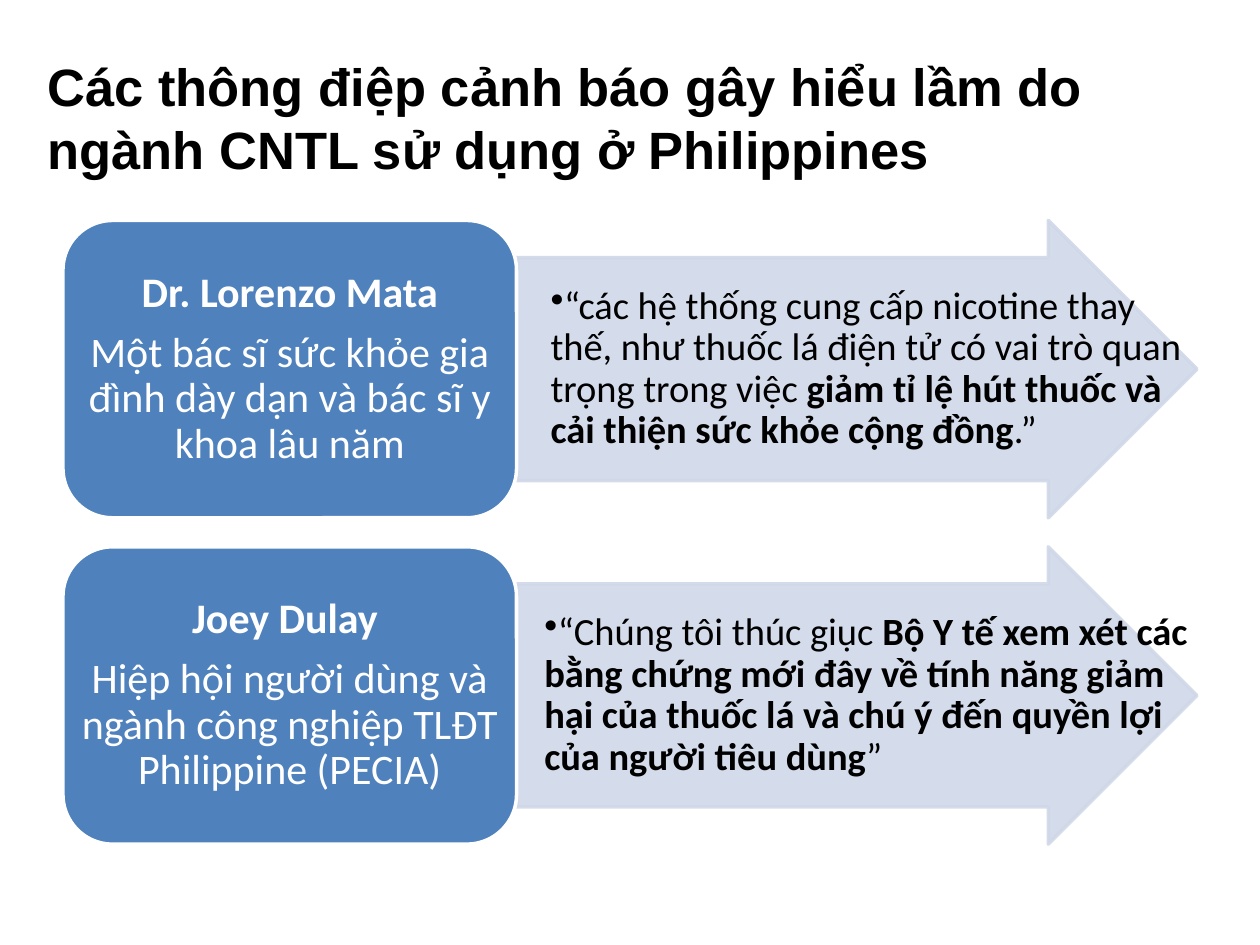
from lxml import etree
from pptx import Presentation
from pptx.dml.color import RGBColor
from pptx.enum.shapes import MSO_SHAPE
from pptx.enum.text import MSO_ANCHOR, PP_ALIGN
from pptx.oxml.ns import qn
from pptx.util import Pt

PX = 9144
ARROW, ROUND = MSO_SHAPE.RIGHT_ARROW, MSO_SHAPE.ROUNDED_RECTANGLE
MIDDLE, CENTER = MSO_ANCHOR.MIDDLE, PP_ALIGN.CENTER
HEX = {"black": "000000", "white": "FFFFFF", "blue": "4F81BD", "pale": "D0D8E8"}
TITLE = "Các thông điệp cảnh báo gây hiểu lầm do ngành CNTL sử dụng ở Philippines"
ROWS = [
    ("Dr. Lorenzo Mata",
     "Một bác sĩ sức khỏe gia đình dày dạn và bác sĩ y khoa lâu năm", 25,
     ("“các hệ thống cung cấp nicotine thay thế, như thuốc lá điện tử có vai trò "
      "quan trọng trong việc ",
      "giảm tỉ lệ hút thuốc và cải thiện sức khỏe cộng đồng", ".”")),
    ("Joey Dulay ",
     "Hiệp hội người dùng và ngành công nghiệp TLĐT Philippine (PECIA)", 20,
     ("“Chúng tôi thúc giục ",
      "Bộ Y tế xem xét các bằng chứng mới đây về tính năng giảm hại của thuốc lá "
      "và chú ý đến quyền lợi của người tiêu dùng", "”")),
]


class Deck:
    """Holds the style and the current slide, and draws each kind of element."""

    def __init__(self):
        self.prs = Presentation()
        self.prs.slide_width, self.prs.slide_height = 1000 * PX, 750 * PX
        self.slide = self.prs.slides.add_slide(self.prs.slide_layouts[6])

    def color(self, name):
        return RGBColor.from_string(HEX[name])

    def font(self, par, size, tone, face="Calibri", bold=None):
        font = par.font
        font.size, font.name, font.bold = Pt(size), face, bold
        font.color.rgb = self.color(tone)

    def frame(self, shape, pad):
        frame = shape.text_frame
        frame.word_wrap, frame.vertical_anchor = True, MIDDLE
        frame.margin_left = frame.margin_right = pad * PX
        frame.margin_top = frame.margin_bottom = pad * PX
        return frame

    def box(self, area, pad):
        shape = self.slide.shapes.add_textbox(*(n * PX for n in area))
        return self.frame(shape, pad)

    def shape(self, kind, area, fill, line):
        shape = self.slide.shapes.add_shape(kind, *(n * PX for n in area))
        shape.shadow.inherit = False
        shape.fill.solid()
        shape.fill.fore_color.rgb = self.color(fill)
        shape.line.color.rgb = self.color(line)
        shape.line.width = Pt(2)
        return shape

    def title(self, text, area):
        par = self.box(area, 10).paragraphs[0]
        par.text = text
        self.font(par, 30, "black", "Arial", True)

    def arrow(self, area):
        shape = self.shape(ARROW, area, "pale", "pale")
        shape.adjustments[0], shape.adjustments[1] = 0.75, 0.5
        for tint in shape._element.spPr.iter(qn("a:srgbClr")):
            etree.SubElement(tint, qn("a:alpha"), val="90000")

    def quote(self, area, parts, indent):
        par = self.box(area, 2).paragraphs[0]
        par.line_spacing, par.space_after = 0.9, Pt(3.3)
        props = par._p.get_or_add_pPr()
        props.set("marL", str(indent * PX))
        props.set("indent", "0")
        etree.SubElement(props, qn("a:buChar"), char="•")
        self.font(par, 22, "black")
        for part, bold in zip(parts, (False, True, False)):
            run = par.add_run()
            run.text, run.font.bold = part, bold

    def card(self, area, name, role):
        frame = self.frame(self.shape(ROUND, area, "blue", "white"), 0)
        frame.text = f"{name}\n{role}"
        for par, bold in zip(frame.paragraphs, (True, False)):
            par.alignment, par.line_spacing, par.space_after = CENTER, 0.9, Pt(8.4)
            self.font(par, 24, "white", bold=bold)

    def save(self):
        self.prs.save("out.pptx")


def main():
    deck = Deck()
    deck.title(TITLE, (28, 30, 951, 125))
    for i, (name, role, indent, parts) in enumerate(ROWS):
        top = 175 + i * 259
        area = (410, top, 540, 236)
        deck.arrow(area)
        deck.quote(area, parts, indent)
        deck.card((50, top, 360, 236), name, role)
    deck.save()


if __name__ == "__main__":
    main()
